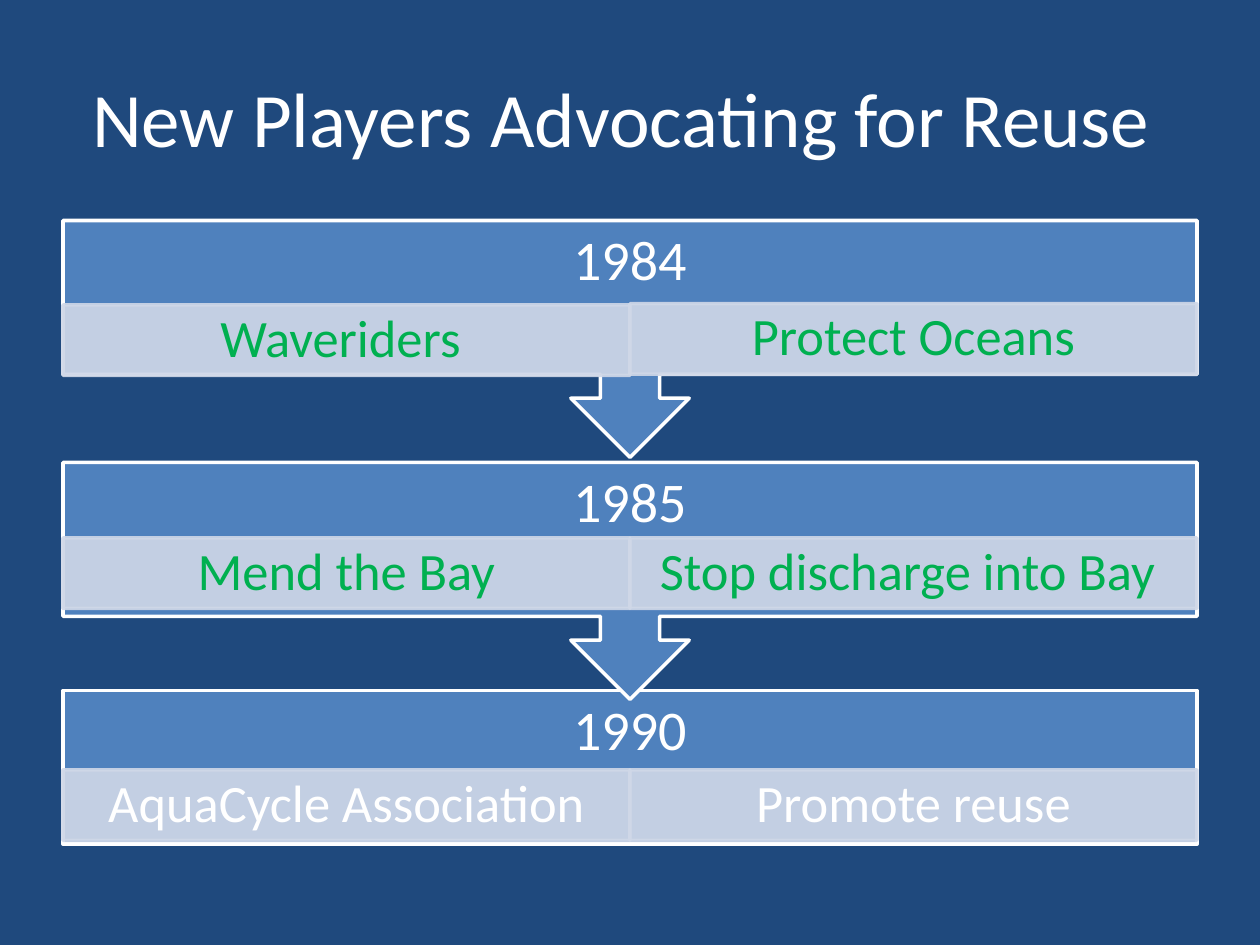
from pptx import Presentation
from pptx.dml.color import RGBColor
from pptx.enum.shapes import MSO_SHAPE as Preset
from pptx.enum.text import MSO_ANCHOR as Anchor, PP_ALIGN as Align
from pptx.oxml import parse_xml
from pptx.oxml.ns import nsdecls
from pptx.util import Inches, Pt

COLORS = {
    "navy": "1F497D",
    "blue": "4F81BD",
    "pale": "D0D8E8",
    "white": "FFFFFF",
    "green": "00B050",
}
FONT = "Calibri"
LEFT, WIDTH = 0.5, 9
HALF = WIDTH / 2
HEADER_HEIGHT, CELL_HEIGHT = 0.66, 0.56
CALLOUT_HEIGHT, LAST_HEIGHT = 1.88, 1.22

STAGES = [
    ("1990", 5.48, False, "white",
     [("AquaCycle Association", 6.11), ("Promote reuse", 6.11)]),
    ("1985", 3.67, True, "green",
     [("Mend the Bay", 4.27), ("Stop discharge into Bay ", 4.27)]),
    ("1984", 1.75, True, "green",
     [("Waveriders ", 2.42), ("Protect Oceans", 2.41)]),
]


def rgb(name):
    return RGBColor.from_string(COLORS[name])


def set_alpha(fill, percent):
    color = fill._xPr.find(".//{*}srgbClr")
    color.append(parse_xml(f'<a:alpha {nsdecls("a")} val="{percent * 1000}"/>'))


def write_text(box, text, size, color, side, edge, spacing):
    frame = box.text_frame
    frame.word_wrap = True
    frame.vertical_anchor = Anchor.MIDDLE
    frame.margin_left = frame.margin_right = Inches(side)
    frame.margin_top = frame.margin_bottom = Inches(edge)
    para = frame.paragraphs[0]
    para.alignment = Align.CENTER
    para.line_spacing = spacing
    span = para.add_run()
    span.text = text
    span.font.name = FONT
    span.font.size = Pt(size)
    span.font.color.rgb = rgb(color)


def add_label(page, text, top, height, size, side, edge, spacing):
    box = page.shapes.add_textbox(
        Inches(LEFT), Inches(top), Inches(WIDTH), Inches(height))
    write_text(box, text, size, "white", side, edge, spacing)


def add_panel(page, preset, left, top, width, height, fill, line):
    panel = page.shapes.add_shape(
        preset, Inches(left), Inches(top), Inches(width), Inches(height))
    panel.shadow.inherit = False
    panel.fill.solid()
    panel.fill.fore_color.rgb = rgb(fill)
    panel.line.color.rgb = rgb(line)
    panel.line.width = Pt(2)
    return panel


def add_cell(page, text, left, top, color):
    cell = add_panel(page, Preset.RECTANGLE, left, top, HALF, CELL_HEIGHT,
                     "pale", "pale")
    set_alpha(cell.fill, 90)
    set_alpha(cell.line.fill, 90)
    write_text(cell, text, 30, color, 0.1, 0.04, 0.9)


def add_stage(page, year, top, has_arrow, color, cells):
    if has_arrow:
        callout = add_panel(page, Preset.UP_ARROW_CALLOUT, LEFT, top, WIDTH,
                            CALLOUT_HEIGHT, "blue", "white")
        callout.rotation = 180
    else:
        add_panel(page, Preset.RECTANGLE, LEFT, top, WIDTH, LAST_HEIGHT,
                  "blue", "white")
    add_label(page, year, top, HEADER_HEIGHT, 32, 0.25, 0.25, 0.9)
    for column, (text, cell_top) in enumerate(cells):
        add_cell(page, text, LEFT + column * HALF, cell_top, color)


def main():
    deck = Presentation()
    deck.slide_width, deck.slide_height = Inches(10), Inches(7.5)
    page = deck.slides.add_slide(deck.slide_layouts[6])
    page.background.fill.solid()
    page.background.fill.fore_color.rgb = rgb("navy")
    add_label(page, "New Players Advocating for Reuse ", 0.3, 1.25, 44,
              0.1, 0.05, 1.0)
    for stage in STAGES:
        add_stage(page, *stage)
    deck.save("out.pptx")


if __name__ == "__main__":
    main()
